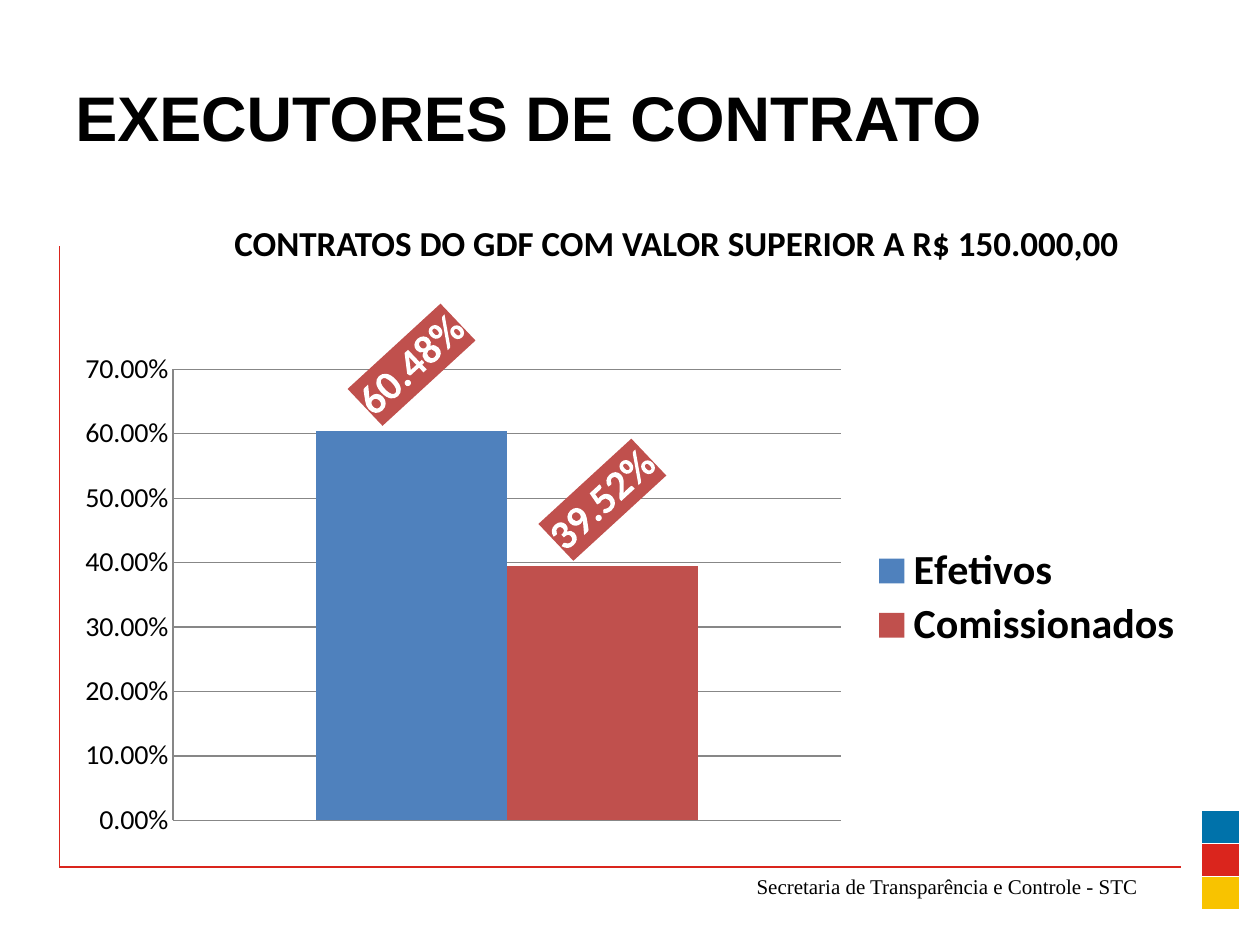
from lxml import etree
from pptx import Presentation
from pptx.chart.data import CategoryChartData
from pptx.dml.color import RGBColor
from pptx.enum.chart import XL_CHART_TYPE, XL_LABEL_POSITION, XL_LEGEND_POSITION, XL_TICK_MARK
from pptx.enum.shapes import MSO_CONNECTOR
from pptx.enum.text import MSO_ANCHOR, PP_ALIGN
from pptx.oxml import parse_xml
from pptx.oxml.ns import qn
from pptx.util import Inches, Pt

COLUMN = XL_CHART_TYPE.COLUMN_CLUSTERED
OUTSIDE = XL_LABEL_POSITION.OUTSIDE_END
RIGHT_SIDE = XL_LEGEND_POSITION.RIGHT
NO_TICK = XL_TICK_MARK.NONE
STRAIGHT = MSO_CONNECTOR.STRAIGHT
TOP, MIDDLE = MSO_ANCHOR.TOP, MSO_ANCHOR.MIDDLE
LEFT, RIGHT = PP_ALIGN.LEFT, PP_ALIGN.RIGHT

BLACK = RGBColor(0x00, 0x00, 0x00)
WHITE = RGBColor(0xFF, 0xFF, 0xFF)
GREY = RGBColor(0x87, 0x87, 0x87)
BLUE = RGBColor(0x00, 0x72, 0xAA)
RED = RGBColor(0xDA, 0x25, 0x1D)
YELLOW = RGBColor(0xF8, 0xC3, 0x00)
BAR_BLUE = RGBColor(0x4F, 0x81, 0xBD)
BAR_RED = RGBColor(0xC0, 0x50, 0x4D)

# Content: text, box, insets, anchor, alignment, font
TEXTS = [
    ("EXECUTORES DE CONTRATO", (0.5, 0.3, 7.96, 1.25), (0.1, 0.05, 0.1, 0.05),
     MIDDLE, LEFT, {"name": "Arial", "size": Pt(36), "bold": True}),
    ("CONTRATOS DO GDF COM VALOR SUPERIOR A R$ 150.000,00", (0.51, 1.69, 8.98, 0.69),
     (1.35, 0.07, 0.1, 0), TOP, LEFT, {"name": "Calibri", "size": Pt(20), "bold": True}),
    ("Secretaria de Transparência e Controle - STC", (0.86, 6.88, 8.27, 0.3),
     (0.1, 0.05, 0.1, 0.05), TOP, RIGHT, {"name": "Times New Roman", "size": Pt(12)}),
]
SERIES = [("Efetivos", 0.6048, BAR_BLUE), ("Comissionados", 0.3952, BAR_RED)]
CORNER = (0.47, 6.88)
ENDS = [(0.47, 1.95), (9.37, 6.88)]
FLAG = [BLUE, RED, YELLOW]
PERCENT = "0.00%"
# Shares of the chart's width and height: x, y, w, h
PLOT = (0.097, 0.107, 0.589, 0.844)
KEY = (0.71, 0.43, 0.28, 0.21)


def style(font, look, color=BLACK):
    for key, value in look.items():
        setattr(font, key, value)
    font.color.rgb = color


def layout(part, shares, inner=False):
    """Pin a chart part to shares of the chart's size."""
    for old in part.findall(qn("c:layout")):
        part.remove(old)
    node = etree.Element(qn("c:layout"))
    manual = etree.SubElement(node, qn("c:manualLayout"))
    marks = [("layoutTarget", "inner")] if inner else []
    marks += [("xMode", "edge"), ("yMode", "edge")]
    marks += zip("xywh", map(str, shares))
    for tag, value in marks:
        etree.SubElement(manual, qn("c:" + tag)).set("val", value)
    before = part.find(qn("c:legendPos"))
    if before is None:
        part.insert(0, node)
    else:
        before.addnext(node)


deck = Presentation()
deck.slide_width, deck.slide_height = Inches(10), Inches(7.5)
slide = deck.slides.add_slide(deck.slide_layouts[6])
shapes = slide.shapes

# Red frame lines
for end in ENDS:
    line = shapes.add_connector(STRAIGHT, *map(Inches, CORNER + end))
    line.line.color.rgb = RED
    line.line.width = Pt(0.75)
    etree.SubElement(line._element.spPr, qn("a:effectLst"))

# Flag of three colours
grid = shapes.add_table(len(FLAG), 1, *map(Inches, (9.53, 6.43, 0.31, 0.79))).table
grid.first_row = grid.horz_banding = False
for row, color in enumerate(FLAG):
    cell = grid.cell(row, 0)
    cell.fill.solid()
    cell.fill.fore_color.rgb = color
    for side in ("left", "right", "top", "bottom"):
        setattr(cell, "margin_" + side, 0)
    cell.text_frame.paragraphs[0].font.size = Pt(8)

# Column chart
data = CategoryChartData(number_format=PERCENT)
data.categories = ["1"]
for name, value, color in SERIES:
    data.add_series(name, [value])
chart = shapes.add_chart(COLUMN, *map(Inches, (0.5, 2.41, 9, 4.31)), data).chart
style(chart.font, {"name": "Calibri", "size": Pt(10)})
chart.has_title = False
chart.category_axis.visible = False
axis = chart.value_axis
limits = {"minimum_scale": 0, "maximum_scale": 0.7, "major_unit": 0.1,
          "major_tick_mark": NO_TICK, "has_major_gridlines": True}
for key, value in limits.items():
    setattr(axis, key, value)
axis.tick_labels.number_format = PERCENT
axis.tick_labels.number_format_is_linked = False
style(axis.tick_labels.font, {"name": "Calibri", "size": Pt(16)})
for rule in (axis.format.line, axis.major_gridlines.format.line):
    rule.color.rgb = GREY
    rule.width = Pt(0.75)

# Bars with slanted labels
plot = chart.plots[0]
plot.gap_width, plot.overlap, plot.vary_by_categories = 150, 0, False
for bar, (name, value, color) in zip(plot.series, SERIES):
    bar.format.fill.solid()
    bar.format.fill.fore_color.rgb = color
    tags = bar.data_labels
    tags.show_value = True
    tags.number_format, tags.number_format_is_linked = PERCENT, False
    tags.position = OUTSIDE
    style(tags.font, {"name": "Calibri", "size": Pt(24), "bold": True}, WHITE)
    body = tags._element.find(qn("c:txPr"))
    body.find(qn("a:bodyPr")).set("rot", str(-43 * 60000))
    body.addprevious(parse_xml(
        '<c:spPr xmlns:c="http://schemas.openxmlformats.org/drawingml/2006/chart" '
        'xmlns:a="http://schemas.openxmlformats.org/drawingml/2006/main">'
        f'<a:solidFill><a:srgbClr val="{BAR_RED}"/></a:solidFill></c:spPr>'))

# Legend and plot places
chart.has_legend = True
legend = chart.legend
legend.position, legend.include_in_layout = RIGHT_SIDE, False
style(legend.font, {"name": "Calibri", "size": Pt(24), "bold": True})
layout(legend._element, KEY)
layout(chart._chartSpace.chart.plotArea, PLOT, inner=True)

# Title, subtitle and footer
for text, box, insets, anchor, align, look in TEXTS:
    frame = shapes.add_textbox(*map(Inches, box)).text_frame
    frame.word_wrap = True
    frame.vertical_anchor = anchor
    for side, gap in zip(("left", "top", "right", "bottom"), insets):
        setattr(frame, "margin_" + side, Inches(gap))
    para = frame.paragraphs[0]
    para.alignment = align
    run = para.add_run()
    run.text = text
    style(run.font, look)

deck.save("out.pptx")
